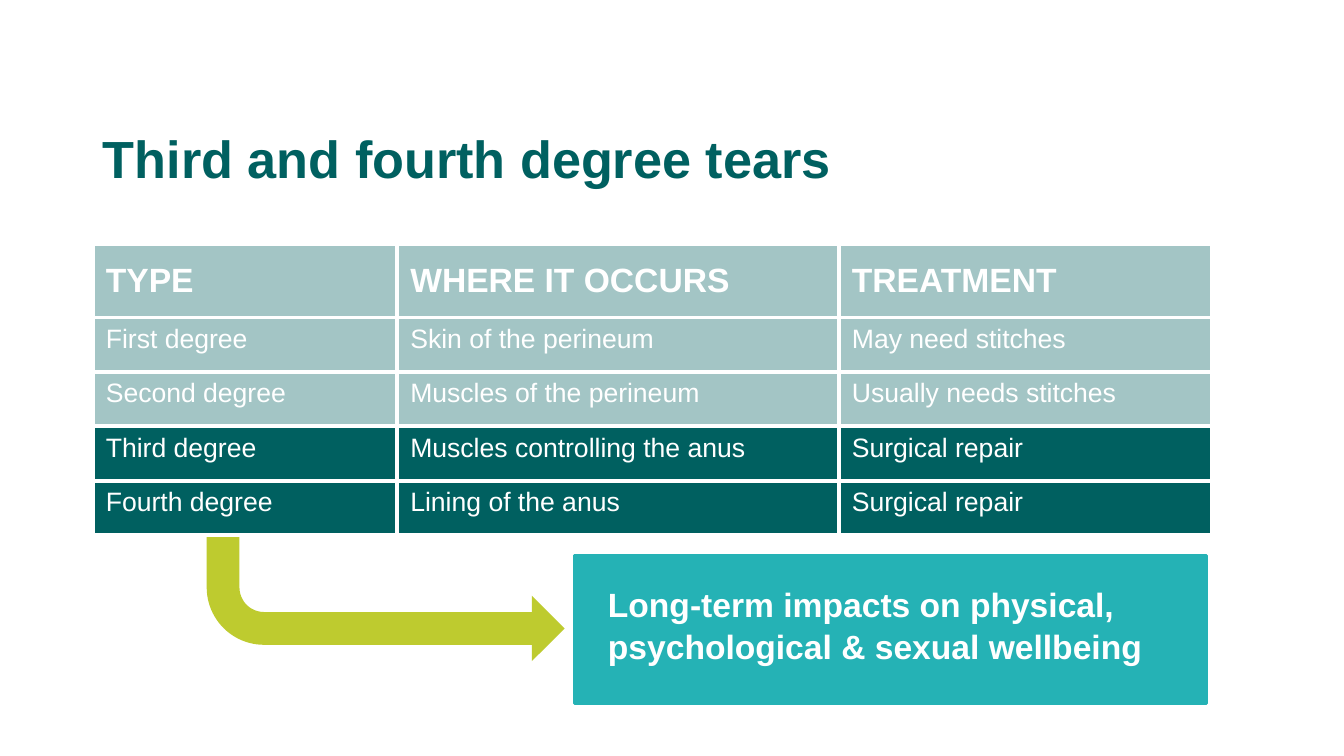
"""Builds a slide on perineal tears with a table, a bent arrow and a callout."""
import pptx
import pptx.dml.color
import pptx.enum.shapes
import pptx.enum.text
import pptx.oxml
import pptx.oxml.ns
import pptx.util
from pptx.util import Inches

RGBColor = pptx.dml.color.RGBColor
MSO_SHAPE = pptx.enum.shapes.MSO_SHAPE
MSO_ANCHOR = pptx.enum.text.MSO_ANCHOR
PP_ALIGN = pptx.enum.text.PP_ALIGN

DARK_TEAL = RGBColor(0x00, 0x60, 0x60)
TURQUOISE = RGBColor(0x25, 0xB2, 0xB5)
LIME = RGBColor(0xBE, 0xCB, 0x2F)
WHITE = RGBColor(0xFF, 0xFF, 0xFF)

COLUMN_WIDTHS = (3.02, 4.38, 3.7)
ROW_HEIGHTS = (0.73, 0.54, 0.54, 0.54, 0.54)
FADED_ROWS = 3
TEARS = (
    ("TYPE", "WHERE IT OCCURS", "TREATMENT"),
    ("First degree", "Skin of the perineum", "May need stitches"),
    ("Second degree", "Muscles of the perineum", "Usually needs stitches"),
    ("Third degree", "Muscles controlling the anus", "Surgical repair"),
    ("Fourth degree", "Lining of the anus", "Surgical repair"),
)


def apply_format(target, values):
    """Set each named attribute on the target."""
    for name, value in values.items():
        setattr(target, name, value)


class SlideBuilder:
    """Holds the text style and the current slide."""

    font_name = "Arial"

    def __init__(self, slide):
        self.slide = slide

    def fill_text(self, frame, text, size, color, bold, spacing=1.0):
        frame.text = text
        paragraph = frame.paragraphs[0]
        apply_format(paragraph, {"alignment": PP_ALIGN.LEFT, "line_spacing": spacing,
                                 "space_before": pptx.util.Pt(0)})
        for run in paragraph.runs:
            apply_format(run.font, {"name": self.font_name, "size": pptx.util.Pt(size),
                                    "bold": bold})
            run.font.color.rgb = color

    def title(self, text, box):
        title = self.slide.shapes.title
        apply_format(title, dict(zip(("left", "top", "width", "height"), map(Inches, box))))
        apply_format(title.text_frame, {"vertical_anchor": MSO_ANCHOR.MIDDLE, "word_wrap": True,
                                        "auto_size": pptx.enum.text.MSO_AUTO_SIZE.NONE})
        self.fill_text(title.text_frame, text, 37.3, DARK_TEAL, True, 0.9)

    def shape(self, kind, box, color, line_width=None):
        shape = self.slide.shapes.add_shape(kind, *map(Inches, box))
        shape.shadow.inherit = False
        shape.fill.solid()
        shape.fill.fore_color.rgb = color
        if line_width:
            shape.line.color.rgb = color
            shape.line.width = pptx.util.Pt(line_width)
        else:
            shape.line.fill.background()
        return shape

    def text(self, text, box):
        frame = self.slide.shapes.add_textbox(*map(Inches, box)).text_frame
        apply_format(frame, {"word_wrap": True, "margin_left": 0})
        self.fill_text(frame, text, 24, WHITE, True, 1.05)

    def cell(self, cell, text, is_header, is_faded):
        apply_format(cell, {
            "margin_left": Inches(0.13), "margin_right": Inches(0.13),
            "margin_top": Inches(0.07), "margin_bottom": Inches(0.07),
            "vertical_anchor": MSO_ANCHOR.MIDDLE if is_header else MSO_ANCHOR.TOP})
        self.fill_text(cell.text_frame, text, 24 if is_header else 19, WHITE, is_header)
        cell.fill.solid()
        cell.fill.fore_color.rgb = DARK_TEAL
        properties = cell._tc.get_or_add_tcPr()
        namespace = pptx.oxml.ns.nsdecls("a")
        if is_faded:
            color = properties.find(".//" + pptx.oxml.ns.qn("a:srgbClr"))
            color.append(pptx.oxml.parse_xml(f'<a:alpha {namespace} val="36000"/>'))
        for position, side in enumerate(("lnL", "lnR", "lnT", "lnB")):
            properties.insert(position, pptx.oxml.parse_xml(
                f'<a:{side} {namespace} w="{pptx.util.Pt(3)}">'
                f'<a:solidFill><a:srgbClr val="{WHITE}"/></a:solidFill></a:{side}>'))

    def table(self, rows, left, top):
        size = (sum(COLUMN_WIDTHS), sum(ROW_HEIGHTS))
        table = self.slide.shapes.add_table(
            len(rows), len(COLUMN_WIDTHS), *map(Inches, (left, top, *size))).table
        for column, width in zip(table.columns, COLUMN_WIDTHS):
            column.width = Inches(width)
        for index, (row, height) in enumerate(zip(table.rows, ROW_HEIGHTS)):
            row.height = Inches(height)
            for cell, text in zip(row.cells, rows[index]):
                self.cell(cell, text, index == 0, index < FADED_ROWS)


def main():
    presentation = pptx.Presentation()
    apply_format(presentation, {"slide_width": Inches(13.33), "slide_height": Inches(7.5)})
    builder = SlideBuilder(presentation.slides.add_slide(presentation.slide_layouts[5]))
    arrow = builder.shape(MSO_SHAPE.BENT_ARROW, (2.05, 5.26, 3.55, 1.3), LIME)
    arrow._element.spPr.xfrm.set("flipV", "1")
    builder.title("Third and fourth degree tears", (0.92, 1.27, 10.58, 0.67))
    builder.table(TEARS, 0.92, 2.42)
    builder.shape(MSO_SHAPE.RECTANGLE, (5.7, 5.51, 6.27, 1.47), TURQUOISE, 2.25)
    builder.text("Long-term impacts on physical,\vpsychological & sexual wellbeing",
                 (6.03, 5.72, 5.62, 0.91))
    presentation.save("out.pptx")


if __name__ == "__main__":
    main()
